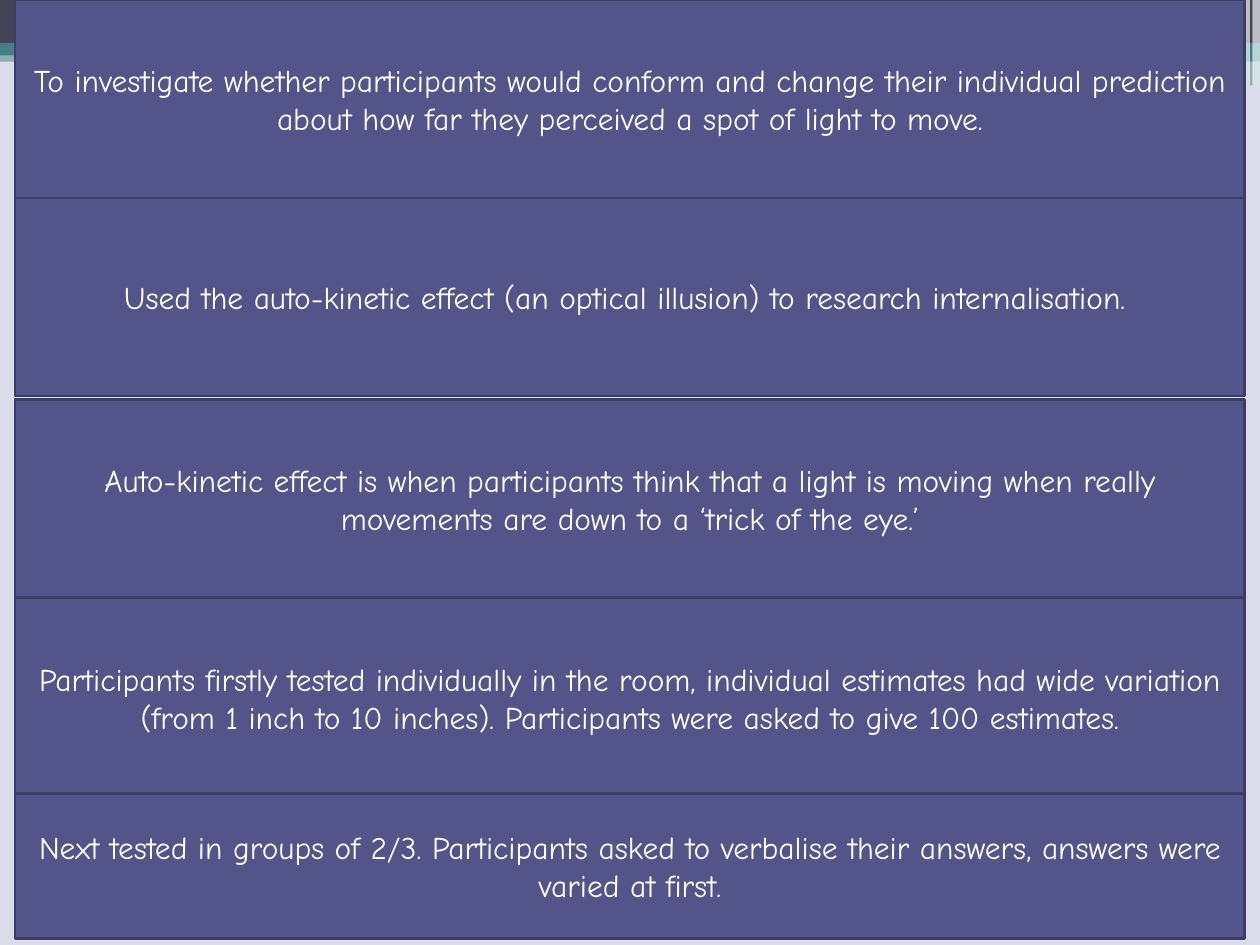
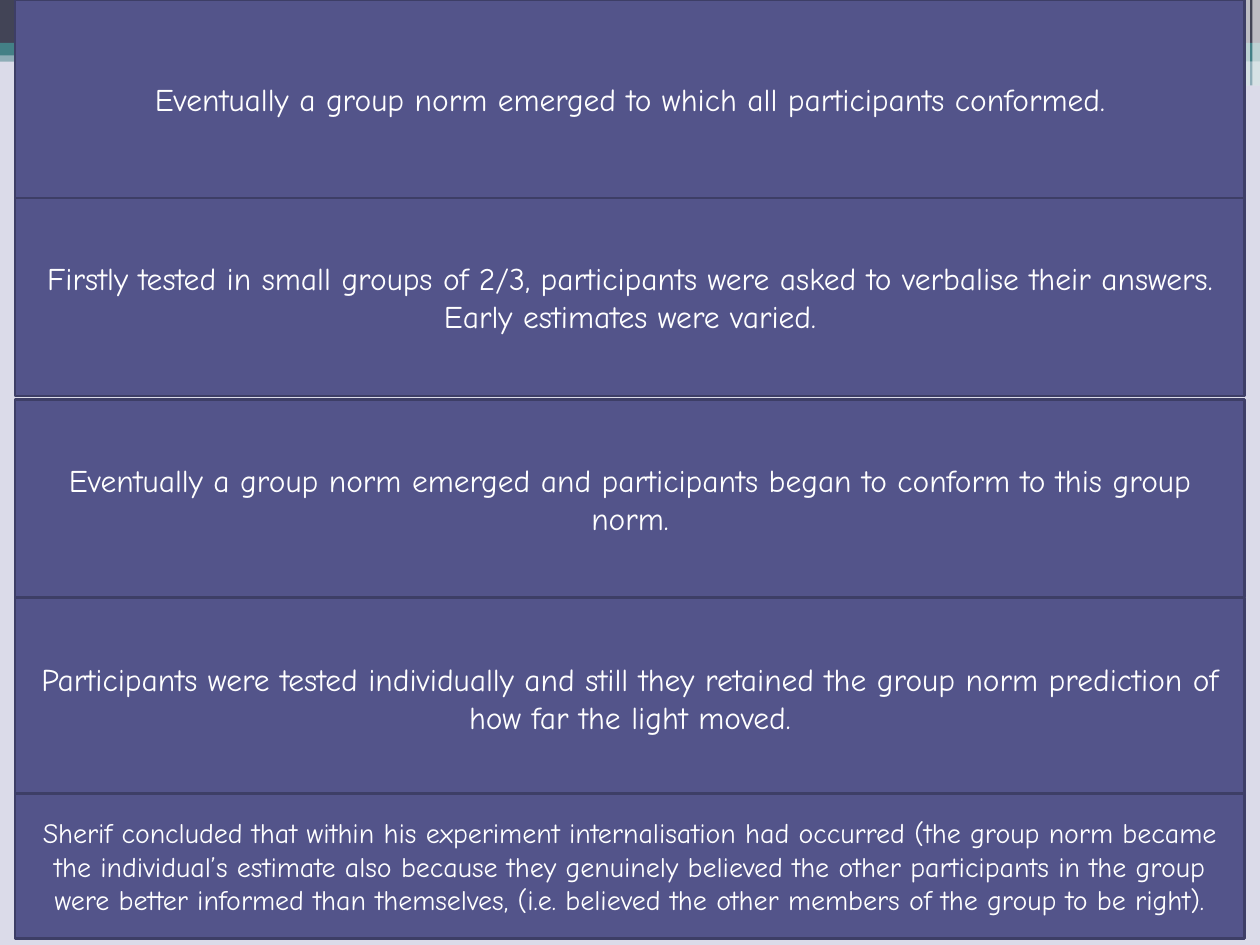
import pptx
import pptx.util
import pptx.dml.color
import pptx.enum.shapes
import pptx.enum.text
import pptx.oxml
import pptx.oxml.ns
from lxml import etree
from dataclasses import dataclass

Pt = pptx.util.Pt


@dataclass(frozen=True)
class Theme:
    back: str = "DBDBE9"
    dark: str = "424456"
    teal: str = "438086"
    white: str = "FFFFFF"
    panel: str = "53548A"
    edge: str = "3D3E66"
    font: str = "Comic Neue"
    body: int = 18
    small: int = 16


def color(code):
    return pptx.dml.color.RGBColor.from_string(code)


class Deck:
    def __init__(self, theme):
        self.theme = theme
        self.file = pptx.Presentation()
        self.file.slide_width = Pt(720)
        self.file.slide_height = Pt(540)
        self.slide = None

    def page(self):
        self.slide = self.file.slides.add_slide(self.file.slide_layouts[6])
        fill = self.slide.background.fill
        fill.solid()
        fill.fore_color.rgb = color(self.theme.back)
        self.header()

    def rect(self, left, top, width, height, fill, alpha=100):
        """Add a plain rectangle; alpha is its opacity in percent."""
        kind = pptx.enum.shapes.MSO_SHAPE.RECTANGLE
        shape = self.slide.shapes.add_shape(
            kind, Pt(left), Pt(top), Pt(width), Pt(height))
        shape.shadow.inherit = False
        shape.fill.solid()
        shape.fill.fore_color.rgb = color(fill)
        shape.line.fill.background()
        if alpha < 100:
            tag = pptx.oxml.ns.qn("a:srgbClr")
            node = next(shape.fill._xPr.iter(tag))
            etree.SubElement(node, pptx.oxml.ns.qn("a:alpha"),
                             val=str(alpha * 1000))
        return shape

    def header(self):
        look = self.theme
        # Bands across the top
        self.rect(0, 28.8, 720, 6.5, look.teal, 50)
        self.rect(0, 0, 720, 24.5, look.dark)
        self.rect(0, 24.5, 720, 7.2, look.teal)
        # Step at the right
        self.rect(426, 28, 294, 7, look.teal)
        self.rect(426, 34.8, 294, 14, look.teal, 50)
        # Thin light stripes
        for left, width, height, alpha in STRIPES:
            self.rect(left, 0, width, height, look.white, alpha)

    def panel(self, top, height, text, size):
        look = self.theme
        shape = self.rect(8.64, top, 702.72, height, look.panel)
        shape.line.color.rgb = color(look.edge)
        shape.line.width = Pt(1.5)
        frame = shape.text_frame
        frame.word_wrap = True
        frame.vertical_anchor = pptx.enum.text.MSO_ANCHOR.MIDDLE
        para = frame.paragraphs[0]
        para.text = text
        para.alignment = pptx.enum.text.PP_ALIGN.CENTER
        para.font.name = look.font
        para.font.size = Pt(size)
        para.font.color.rgb = color(look.white)

    def stack(self, texts, last):
        """Fill the rows from the top; last is the type size of the final one."""
        sizes = [self.theme.body] * (len(texts) - 1) + [last]
        for (top, height), text, size in zip(ROWS, texts, sizes):
            self.panel(top, height, text, size)


# Left, width, height and opacity of each stripe
STRIPES = [
    (715.7, 4.3, 49, 65),
    (712.1, 2.2, 49, 65),
    (710.6, 0.7, 49, 60),
    (707, 2.2, 49, 40),
    (702, 4.3, 46, 20),
    (698.4, 0.7, 46, 30),
]

# Top and height of each panel
ROWS = [(0, 113.2), (113.2, 113.2), (228.4, 113.2), (341.8, 113.6),
        (453.6, 82.6)]

METHOD = [
    "To investigate whether participants would conform and change their "
    "individual prediction about how far they perceived a spot of light "
    "to move.",
    "Used the auto-kinetic effect (an optical illusion) to research "
    "internalisation. ",
    "Auto-kinetic effect is when participants think that a light is moving "
    "when really movements are down to a ‘trick of the eye.’",
    "Participants firstly tested individually in the room, individual "
    "estimates had wide variation (from 1 inch to 10 inches). Participants "
    "were asked to give 100 estimates.",
    "Next tested in groups of 2/3. Participants asked to verbalise their "
    "answers, answers were varied at first.",
]

RESULT = [
    "Eventually a group norm emerged to which all participants conformed.",
    "Firstly tested in small groups of 2/3, participants were asked to "
    "verbalise their answers. Early estimates were varied.",
    "Eventually a group norm emerged and participants began to conform to "
    "this group norm.",
    "Participants were tested individually and still they retained the "
    "group norm prediction of how far the light moved.",
    "Sherif concluded that within his experiment internalisation had "
    "occurred (the group norm became the individual’s estimate also because "
    "they genuinely believed the other participants in the group were better "
    "informed than themselves, (i.e. believed the other members of the group "
    "to be right).",
]


def main():
    deck = Deck(Theme())
    # Aim and method
    deck.page()
    deck.stack(METHOD, deck.theme.body)
    # Results and conclusion
    deck.page()
    deck.stack(RESULT, deck.theme.small)
    deck.file.save("out.pptx")


if __name__ == "__main__":
    main()
